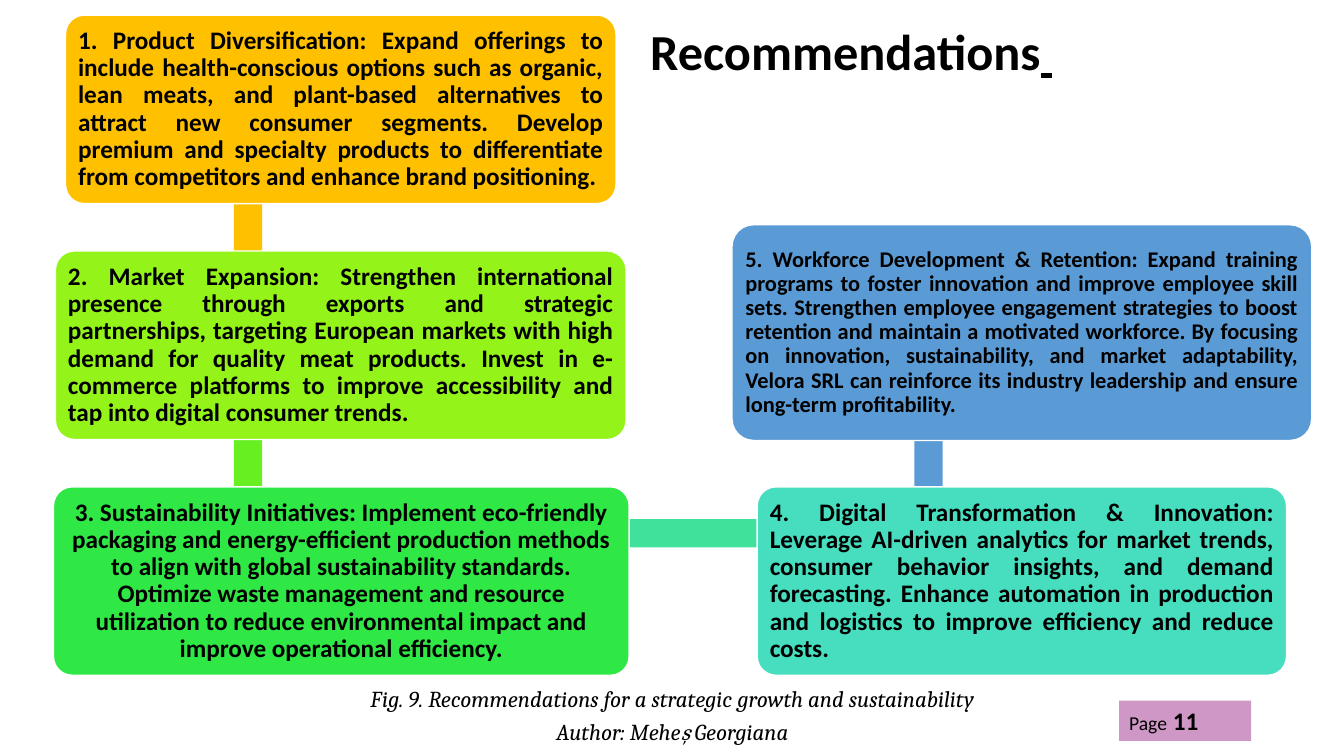
from dataclasses import dataclass

import pptx
import pptx.dml.color
import pptx.enum.shapes
import pptx.enum.text
import pptx.oxml.ns
import pptx.util
from lxml import etree

Inches = pptx.util.Inches
Pt = pptx.util.Pt
Shapes = pptx.enum.shapes.MSO_SHAPE
Align = pptx.enum.text.PP_ALIGN
Anchor = pptx.enum.text.MSO_ANCHOR


@dataclass
class Place:
    left: float
    top: float
    width: float
    height: float


@dataclass
class Link:
    place: Place
    color: str


@dataclass
class Card:
    place: Place
    color: str
    text: str
    size: float = 18
    align: Align = Align.JUSTIFY


LINKS = [
    Link(Place(2.32, 0.62, 0.28, 2.33), "FFC000"),
    Link(Place(2.32, 2.96, 0.28, 2.33), "67EF21"),
    Link(Place(2.46, 5.15, 6.74, 0.28), "3FE19B"),
    Link(Place(9.07, 2.82, 0.28, 2.46), "5B9BD5"),
]

CARDS = [
    Card(Place(0.65, 0.15, 5.46, 1.87), "FFC000",
         "1. Product Diversification: Expand offerings to include health-conscious options "
         "such as organic, lean meats, and plant-based alternatives to attract new consumer "
         "segments. Develop premium and specialty products to differentiate from competitors "
         "and enhance brand positioning."),
    Card(Place(0.55, 2.49, 5.66, 1.87), "94F319",
         "2. Market Expansion: Strengthen international presence through exports and strategic "
         "partnerships, targeting European markets with high demand for quality meat products. "
         "Invest in e-commerce platforms to improve accessibility and tap into digital "
         "consumer trends."),
    Card(Place(0.53, 4.83, 5.71, 1.87), "30E845",
         "3. Sustainability Initiatives: Implement eco-friendly packaging and energy-efficient "
         "production methods to align with global sustainability standards. Optimize waste "
         "management and resource utilization to reduce environmental impact and improve "
         "operational efficiency.", align=Align.CENTER),
    Card(Place(7.51, 4.83, 5.25, 1.87), "46DEBF",
         "4. Digital Transformation & Innovation: Leverage AI-driven analytics for market "
         "trends, consumer behavior insights, and demand forecasting. Enhance automation in "
         "production and logistics to improve efficiency and reduce costs."),
    Card(Place(7.26, 2.23, 5.75, 2.14), "5B9BD5",
         "5. Workforce Development & Retention: Expand training programs to foster innovation "
         "and improve employee skill sets. Strengthen employee engagement strategies to boost "
         "retention and maintain a motivated workforce. By focusing on innovation, "
         "sustainability, and market adaptability, Velora SRL can reinforce its industry "
         "leadership and ensure long-term profitability.", size=16),
]

CAPTION = [
    "Fig. 9. Recommendations for a strategic growth and sustainability",
    "Author: Meheș Georgiana",
]


def rgb(color: str) -> pptx.dml.color.RGBColor:
    return pptx.dml.color.RGBColor.from_string(color)


def set_font(font, size: float, name: str = "Calibri", bold: bool = False,
             italic: bool = False) -> None:
    font.name = name
    font.size = Pt(size)
    font.bold = bold
    font.italic = italic
    font.color.rgb = rgb("000000")


def bounds(place: Place) -> list:
    return [Inches(value) for value in (place.left, place.top, place.width, place.height)]


def add_block(page, kind: Shapes, place: Place, color: str):
    block = page.shapes.add_shape(kind, *bounds(place))
    block.shadow.inherit = False
    block.fill.solid()
    block.fill.fore_color.rgb = rgb(color)
    block.line.fill.background()
    return block


def add_text(page, place: Place):
    frame = page.shapes.add_textbox(*bounds(place)).text_frame
    frame.word_wrap = True
    return frame


def add_card(page, card: Card) -> None:
    box = add_block(page, Shapes.ROUNDED_RECTANGLE, card.place, card.color)
    box.adjustments[0] = 0.1
    box.line.color.rgb = rgb("FFFFFF")
    box.line.width = Pt(1)
    frame = box.text_frame
    frame.word_wrap = True
    frame.vertical_anchor = Anchor.MIDDLE
    frame.margin_left = frame.margin_right = Inches(0.07)
    frame.margin_top = frame.margin_bottom = Inches(0.07)
    para = frame.paragraphs[0]
    para.text = card.text
    para.alignment = card.align
    para.line_spacing = 0.9
    set_font(para.font, card.size, bold=True)


def add_page_number(page) -> None:
    badge = add_block(page, Shapes.RECTANGLE, Place(11.1, 6.95, 1.31, 0.4), "9F318D")
    tint = badge.fill._xPr.find(".//" + pptx.oxml.ns.qn("a:srgbClr"))
    etree.SubElement(tint, pptx.oxml.ns.qn("a:alpha"), val="50000")
    badge.text_frame.vertical_anchor = Anchor.MIDDLE
    para = badge.text_frame.paragraphs[0]
    para.alignment = Align.LEFT
    for text, size, bold in (("Page", 14, False), (" 11", 18, True)):
        span = para.add_run()
        span.text = text
        set_font(span.font, size, bold=bold)


def add_caption(page) -> None:
    frame = add_text(page, Place(0.92, 6.82, 11.5, 0.65))
    for index, line in enumerate(CAPTION):
        para = frame.add_paragraph() if index else frame.paragraphs[0]
        para.text = line
        para.alignment = Align.CENTER
        para.line_spacing = 0.7
        para.space_before = Pt(10 if index else 0)
        set_font(para.font, 16.3, name="Cambria", italic=True)


def add_title(page) -> None:
    para = add_text(page, Place(6.35, 0.15, 4.38, 0.71)).paragraphs[0]
    for text, bold in (("Recommendations", True), (" ", False)):
        span = para.add_run()
        span.text = text
        set_font(span.font, 36, bold=bold)
        span.font.underline = not bold


def main() -> None:
    deck = pptx.Presentation()
    deck.slide_width = Inches(13.33)
    deck.slide_height = Inches(7.5)
    page = deck.slides.add_slide(deck.slide_layouts[6])
    add_page_number(page)
    for link in LINKS:
        add_block(page, Shapes.RECTANGLE, link.place, link.color)
    for card in CARDS:
        add_card(page, card)
    add_caption(page)
    add_title(page)
    deck.save("out.pptx")


if __name__ == "__main__":
    main()
